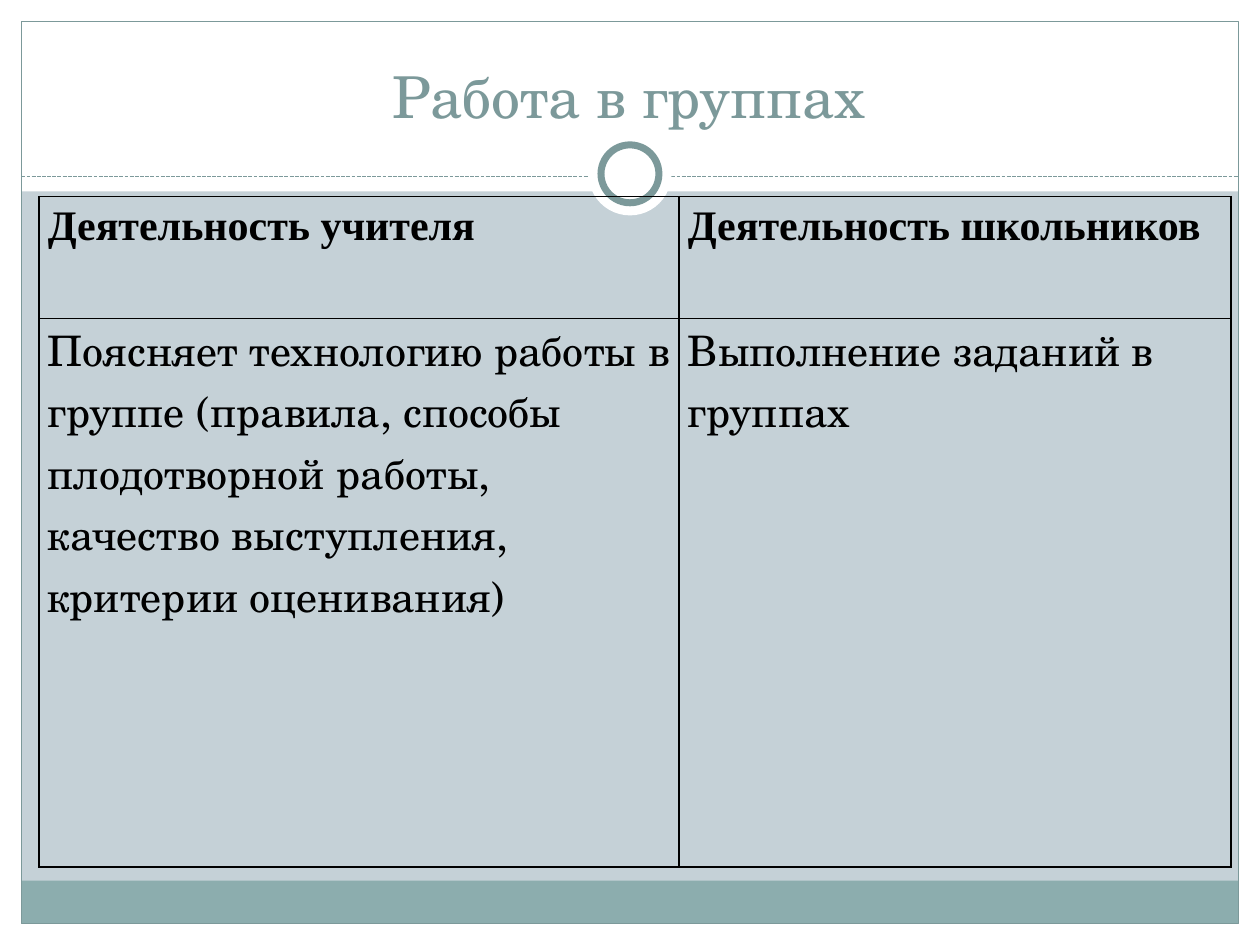
from pptx import Presentation
from pptx.dml.color import RGBColor
from pptx.enum.dml import MSO_LINE
from pptx.enum.shapes import MSO_CONNECTOR, MSO_SHAPE as Shape
from pptx.enum.text import MSO_ANCHOR as Anchor, PP_ALIGN as Align
from pptx.oxml.ns import qn
from pptx.util import Pt
from lxml.etree import SubElement as Sub

PX = 9144  # 100 px to the inch
WIDE, HIGH = 1000, 750
EDGE = 17
HEX = {"back": "C5D1D7", "white": "FFFFFF", "teal": "7C999A",
       "foot": "8CADAE", "black": "000000"}
SERIF, TIMES = "TeX Gyre Schola", "Times New Roman"
ROWS = [
    ["Деятельность учителя", "Деятельность школьников"],
    ["Поясняет технологию работы в группе (правила, способы плодотворной "
     "работы, качество выступления, критерии оценивания)",
     "Выполнение заданий в группах"],
]


def emu(*nums):
    return [n * PX for n in nums]


def tint(name):
    return RGBColor.from_string(HEX[name])


def draw(slide, kind, box, fill=None, line=None, width=0.75):
    shape = slide.shapes.add_shape(kind, *emu(*box))
    shape.shadow.inherit = False
    if fill:
        shape.fill.solid()
        shape.fill.fore_color.rgb = tint(fill)
    else:
        shape.fill.background()
    if line:
        shape.line.color.rgb = tint(line)
        shape.line.width = Pt(width)
    else:
        shape.line.fill.background()


def write(para, text, size, face, color, bold=False):
    run = para.add_run()
    run.text = text
    font = run.font
    font.size, font.name, font.bold = Pt(size), face, bold
    font.color.rgb = tint(color)


def frame(slide, box):
    x, y, w, h = box
    # White margins and header band
    for part in [(x, y + h - EDGE, w, EDGE), (x, y, w, 152),
                 (x, y, EDGE, h), (x + w - EDGE, y, EDGE, h)]:
        draw(slide, Shape.RECTANGLE, part, "white")
    # Footer band and outline
    inner = w - 2 * EDGE
    draw(slide, Shape.RECTANGLE, (x + EDGE, y + h - EDGE - 34, inner, 34), "foot")
    draw(slide, Shape.RECTANGLE, (x + EDGE, y + EDGE, inner, h - 2 * EDGE),
         line="teal")
    # Dashed rule
    rule = slide.shapes.add_connector(
        MSO_CONNECTOR.STRAIGHT,
        *emu(x + EDGE, y + 140, x + w - EDGE, y + 140))
    rule.line.color.rgb = tint("teal")
    rule.line.width = Pt(0.75)
    rule.line.dash_style = MSO_LINE.SQUARE_DOT
    Sub(rule._element.spPr, qn("a:effectLst"))
    # Ring on the rule
    mid_x, mid_y = x + w // 2, y + 138
    for size, line in [(66, None), (46, "teal")]:
        box = (mid_x - size // 2, mid_y - size // 2, size, size)
        draw(slide, Shape.OVAL, box, "white", line, 4)


def title(slide, box, text):
    area = slide.shapes.add_textbox(*emu(*box)).text_frame
    area.word_wrap = True
    area.vertical_anchor = Anchor.BOTTOM
    para = area.paragraphs[0]
    para.alignment = Align.CENTER
    write(para, text, 33, SERIF, "teal")


def border(cell):
    props = cell._tc.get_or_add_tcPr()
    for at, side in enumerate(["lnL", "lnR", "lnT", "lnB"]):
        line = props.makeelement(qn("a:" + side), {"w": str(Pt(1))})
        props.insert(at, line)
        fill = Sub(line, qn("a:solidFill"))
        Sub(fill, qn("a:srgbClr"), val=HEX["black"])


def grid(slide, box, rows, cols, highs):
    table = slide.shapes.add_table(len(rows), len(cols), *emu(*box)).table
    table.first_row = table.horz_banding = False
    for col, w in zip(table.columns, cols):
        col.width = w * PX
    for i, (row, h) in enumerate(zip(table.rows, highs)):
        row.height = h * PX
        head = i == 0
        for cell, text in zip(row.cells, rows[i]):
            cell.fill.background()
            cell.margin_left = cell.margin_right = 7 * PX
            cell.margin_top = cell.margin_bottom = 0
            border(cell)
            para = cell.text_frame.paragraphs[0]
            para.line_spacing = 1.15 if head else 1.0
            write(para, text, 24, TIMES if head else SERIF, "black", head)


def main():
    deck = Presentation()
    deck.slide_width, deck.slide_height = emu(WIDE, HIGH)
    slide = deck.slides.add_slide(deck.slide_layouts[6])
    back = slide.background.fill
    back.solid()
    back.fore_color.rgb = tint("back")
    frame(slide, (0, 0, WIDE, HIGH))
    title(slide, (33, 25, 933, 83), "Работа в группах")
    grid(slide, (31, 156, 946, 532), ROWS, [508, 438], [97, 435])
    deck.save("out.pptx")


if __name__ == "__main__":
    main()
